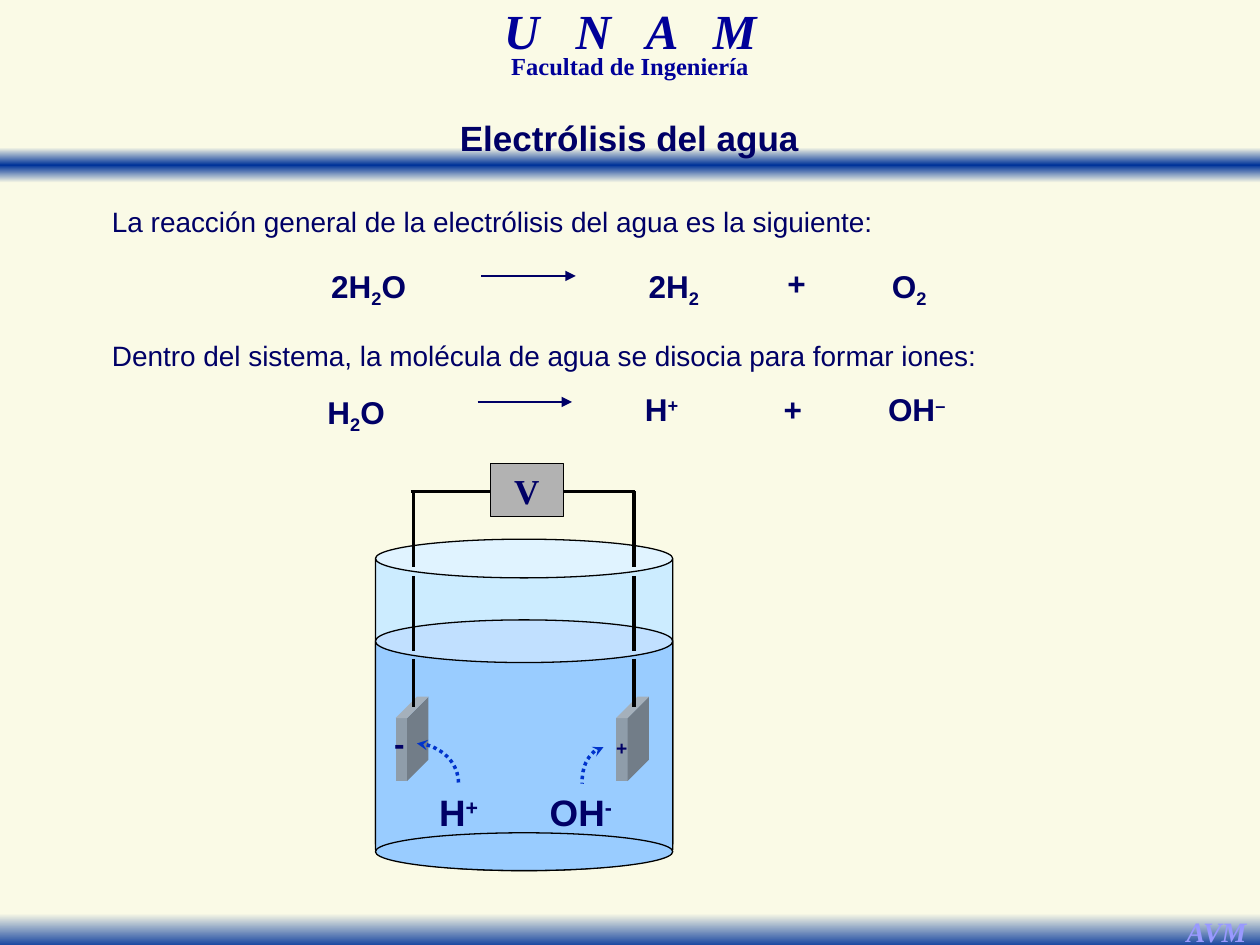
from typing import NamedTuple

from lxml import etree
from pptx import Presentation
from pptx import util as u
from pptx.dml.color import RGBColor
from pptx.enum import dml, shapes, text
from pptx.oxml.ns import qn

# Every length counts cells of a grid of 10 columns by 7.5 rows.
COLUMNS, ROWS = 10, 7.5
CELL = u.Inches(1)
CREAM, BLUE, NAVY, BLACK, GREY = "FAFAE6", "003399", "000066", "000000", "B2B2B2"
SERIF, SANS = "Times New Roman", "Arial"
SUB, SUPER = -25, 30
CENTER, JUSTIFY = text.PP_ALIGN.CENTER, text.PP_ALIGN.JUSTIFY
SHAPE = shapes.MSO_SHAPE
STRAIGHT, CURVE = shapes.MSO_CONNECTOR.STRAIGHT, shapes.MSO_CONNECTOR.CURVE


class Box(NamedTuple):
    left: float
    top: float
    width: float
    height: float


class Run(NamedTuple):
    text: str
    baseline: int = 0
    spacing: int = 0


class Style(NamedTuple):
    size: float
    font: str = SANS
    color: str = NAVY
    bold: bool = True
    italic: bool = False
    align: text.PP_ALIGN = CENTER
    line_spacing: float = 1.0


class Equation(NamedTuple):
    left: float
    top: float
    terms: list[list[Run]]


def rgb(color: str) -> RGBColor:
    return RGBColor.from_string(color)


def cells(*counts: float) -> list[int]:
    return [round(count * CELL) for count in counts]


def write(shape, runs: list[Run], style: Style, wrap: bool = False) -> None:
    frame = shape.text_frame
    frame.word_wrap = wrap
    paragraph = frame.paragraphs[0]
    paragraph.alignment = style.align
    paragraph.line_spacing = style.line_spacing
    font = paragraph.font
    font.size, font.name = u.Pt(style.size), style.font
    font.bold, font.italic = style.bold, style.italic
    font.color.rgb = rgb(style.color)
    for part in runs:
        run = paragraph.add_run()
        run.text = part.text
        properties = run._r.get_or_add_rPr()
        if part.baseline:
            properties.set("baseline", str(part.baseline * 1000))
        if part.spacing:
            properties.set("spc", str(part.spacing * 100))


def add_text(slide, box: Box, runs: list[Run], style: Style, wrap: bool = False) -> None:
    write(slide.shapes.add_textbox(*cells(*box)), runs, style, wrap)


def add_solid(slide, kind, box: Box, fill: str, line: str = "", adjust: float = 0):
    shape = slide.shapes.add_shape(kind, *cells(*box))
    shape.shadow.inherit = False
    shape.fill.solid()
    shape.fill.fore_color.rgb = rgb(fill)
    if line:
        shape.line.color.rgb = rgb(line)
        shape.line.width = u.Pt(0.75)
    else:
        shape.line.fill.background()
    if adjust:
        shape.adjustments[0] = adjust
    return shape


def add_band(slide, top: float, colors: list[str]) -> None:
    """Full-width bar whose colours run evenly from top to bottom."""
    band = add_solid(slide, SHAPE.RECTANGLE, Box(0, top, COLUMNS, 0.28), BLUE)
    band.fill.gradient()
    band.fill.gradient_angle = 270
    stops = band._element.spPr.find(qn("a:gradFill")).find(qn("a:gsLst"))
    for stop in list(stops):
        stops.remove(stop)
    for index, color in enumerate(colors):
        position = str(round(100000 * index / (len(colors) - 1)))
        stop = etree.SubElement(stops, qn("a:gs"), pos=position)
        etree.SubElement(stop, qn("a:srgbClr"), val=color)


def add_line(slide, start, end, color: str = BLACK, width: float = 2, kind=STRAIGHT):
    line = slide.shapes.add_connector(kind, *cells(*start, *end))
    line.line.color.rgb = rgb(color)
    line.line.width = u.Pt(width)
    etree.SubElement(line._element.spPr, qn("a:effectLst"))
    return line


def add_arrowhead(line, end: str, kind: str) -> None:
    etree.SubElement(line.line._get_or_add_ln(), qn(f"a:{end}"), type=kind)


def add_ion_path(slide, tip, ion) -> None:
    """Dotted quarter curve, level at the electrode and upright at the ion."""
    path = add_line(slide, tip, ion, "0033CC", 2, CURVE)
    path._element.spPr.find(qn("a:prstGeom")).set("prst", "curvedConnector2")
    path.line.dash_style = dml.MSO_LINE.ROUND_DOT
    add_arrowhead(path, "headEnd", "stealth")


def add_equation(slide, equation: Equation) -> None:
    style = Style(18, align=JUSTIFY, line_spacing=1.4)
    columns = (0, 2.52, 3.62, 4.45)
    widths = (0.81, 0.62, 0.35, 0.67)
    for column, width, term in zip(columns, widths, equation.terms):
        add_text(slide, Box(equation.left + column, equation.top, width, 0.48), term, style)
    level = equation.top + 0.26
    arrow = add_line(slide, (equation.left + 1.29, level),
                     (equation.left + 2.04, level), NAVY, 0.75)
    add_arrowhead(arrow, "tailEnd", "triangle")


def add_header_and_footer(slide) -> None:
    add_band(slide, 1.17, [CREAM, BLUE, CREAM])
    add_band(slide, 7.25, [CREAM, BLUE])
    add_text(slide, Box(3.04, 0.08, 3.92, 0.43), [Run("U N A ", spacing=7), Run("M")],
             Style(28, SERIF, "000099", italic=True, line_spacing=0.7), wrap=True)
    add_text(slide, Box(3.21, 0.42, 3.58, 0.26), [Run("Facultad de Ingeniería")],
             Style(14, SERIF, "000099", line_spacing=0.7), wrap=True)
    add_text(slide, Box(9.31, 7.21, 0.69, 0.37), [Run("AVM")],
             Style(16, SERIF, "9999FF", italic=True))


def add_title(slide) -> None:
    title = slide.shapes.title
    title.left, title.top, title.width, title.height = cells(3.54, 0.74, 2.91, 0.52)
    title.text_frame.vertical_anchor = text.MSO_ANCHOR.TOP
    write(title, [Run("Electrólisis del agua")], Style(20, line_spacing=1.4))
    title._element.getparent().append(title._element)  # in front of the band


def add_cell(slide) -> None:
    left, width = 2.98, 2.36
    add_solid(slide, SHAPE.CAN, Box(left, 4.28, width, 2.57), "CCECFF", BLACK, 0.13)
    add_solid(slide, SHAPE.CAN, Box(left, 4.92, width, 1.99), "99CCFF", BLACK, 0.17)
    add_solid(slide, SHAPE.OVAL, Box(left, 6.61, width, 0.3), "99CCFF", BLACK)
    add_text(slide, Box(3.38, 6.22, 0.52, 0.45), [Run("H"), Run("+", SUPER)], Style(21))
    add_text(slide, Box(4.26, 6.22, 0.7, 0.45), [Run("OH"), Run("-", SUPER)], Style(21))
    for wire in (3.28, 5.03):
        add_solid(slide, SHAPE.CUBE, Box(wire - 0.14, 5.53, 0.26, 0.67), "8F9DAA", adjust=0.65)
        for top, bottom in ((3.9, 4.5), (4.57, 5.17), (5.23, 5.61)):
            add_line(slide, (wire, top), (wire, bottom))
    add_line(slide, (3.26, 3.9), (5.04, 3.9))
    source = add_solid(slide, SHAPE.RECTANGLE, Box(3.89, 3.68, 0.58, 0.42), GREY, BLACK)
    write(source, [Run("V")], Style(20, SERIF))
    add_text(slide, Box(4.79, 5.79, 0.29, 0.28), [Run("+")], Style(11))
    add_text(slide, Box(3.03, 5.7, 0.28, 0.4), [Run("-")], Style(18))
    add_ion_path(slide, (3.31, 5.9), (3.64, 6.22))
    add_ion_path(slide, (4.79, 5.93), (4.62, 6.22))


def main() -> None:
    presentation = Presentation()
    presentation.slide_width, presentation.slide_height = cells(COLUMNS, ROWS)
    slide = presentation.slides.add_slide(presentation.slide_layouts[5])
    slide.background.fill.solid()
    slide.background.fill.fore_color.rgb = rgb(CREAM)
    add_header_and_footer(slide)
    statement = Style(16, bold=False, align=JUSTIFY, line_spacing=1.4)
    for top, sentence in (
        (1.47, "La reacción general de la electrólisis del agua es la siguiente:"),
        (2.53, "Dentro del sistema, la molécula de agua se disocia para formar iones:"),
    ):
        add_text(slide, Box(0.79, top, 8.43, 0.43), [Run(sentence)], statement, wrap=True)
    two, plus = Run("2", SUB), [Run("+")]
    for equation in (
        Equation(2.53, 1.93, [[Run("2H"), two, Run("O")], [Run("2H"), two],
                              plus, [Run("O"), two]]),
        Equation(2.5, 2.93, [[Run("H"), two, Run("O")], [Run("H"), Run("+", SUPER)],
                             plus, [Run("OH"), Run("–", SUPER)]]),
    ):
        add_equation(slide, equation)
    add_cell(slide)
    add_title(slide)
    presentation.save("out.pptx")


if __name__ == "__main__":
    main()
